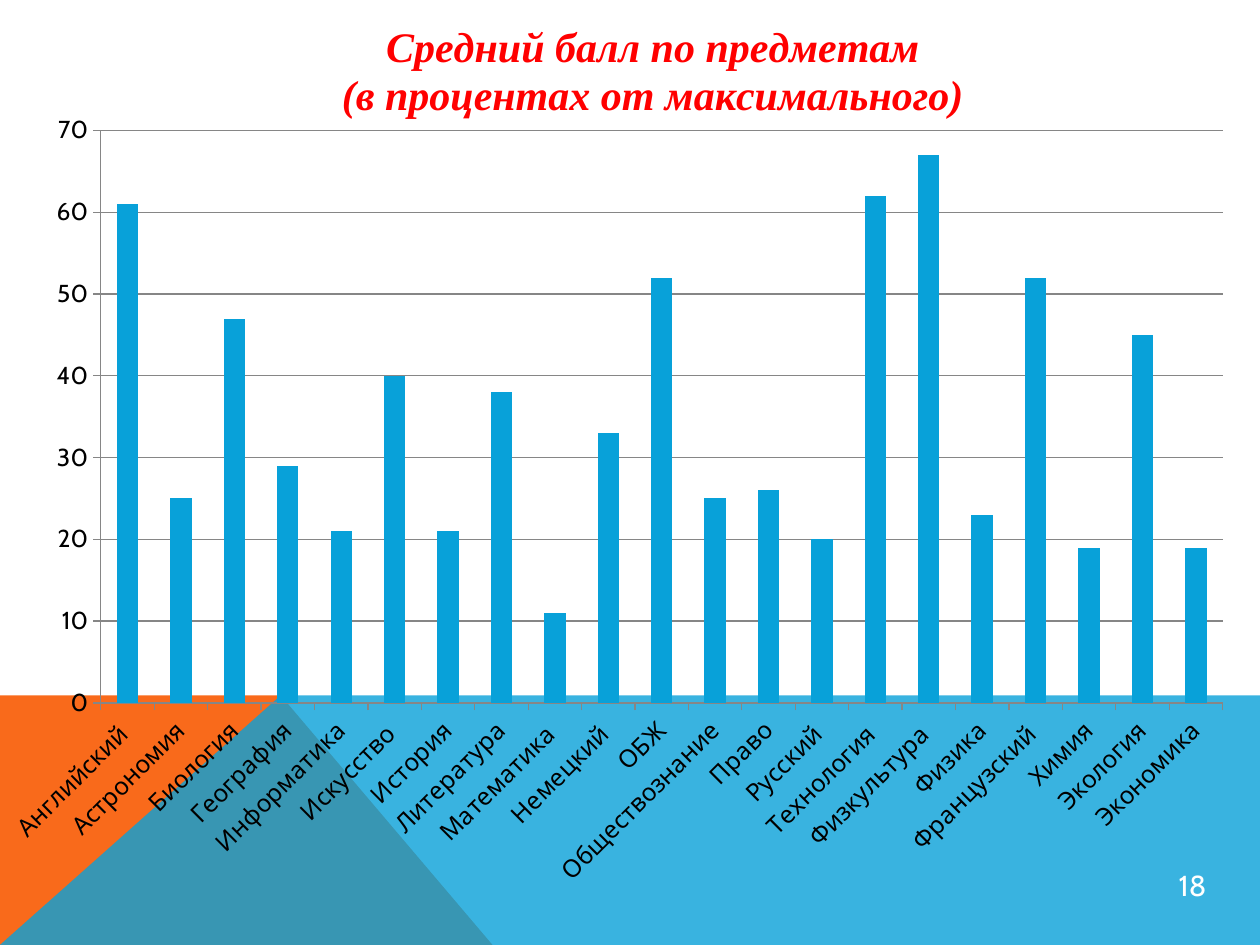
from typing import NamedTuple

from lxml.etree import SubElement
from pptx import Presentation
from pptx.chart.data import CategoryChartData
from pptx.dml.color import RGBColor
from pptx.enum.chart import XL_CHART_TYPE as ChartType, XL_TICK_MARK as TickMark
from pptx.enum.shapes import MSO_SHAPE as ShapeKind
from pptx.enum.text import MSO_ANCHOR as Anchor, PP_ALIGN as Align
from pptx.oxml.ns import qn
from pptx.util import Cm, Pt

ORANGE = RGBColor(0xF9, 0x6A, 0x1B)
BLUE = RGBColor(0x08, 0xA1, 0xD9)
RED = RGBColor(0xFF, 0x00, 0x00)
GRAY = RGBColor(0x86, 0x86, 0x86)
BLACK = RGBColor(0x00, 0x00, 0x00)
WHITE = RGBColor(0xFF, 0xFF, 0xFF)
BODY_FONT = "Cabin"
TITLE_FONT = "Times New Roman"
WIDTH, HEIGHT = 25.4, 19.05
BAND_TOP, PEAK = 14.02, 5.66


class Band(NamedTuple):
    points: list[tuple[float, float]]
    color: RGBColor
    opacity: int


class Score(NamedTuple):
    subject: str
    percent: int


BANDS = [
    Band([(0, HEIGHT), (0, BAND_TOP), (PEAK, BAND_TOP), (9.93, HEIGHT)], ORANGE, 100),
    Band([(0, HEIGHT), (PEAK, BAND_TOP), (WIDTH, BAND_TOP), (WIDTH, HEIGHT)], BLUE, 80),
]

SCORES = [
    Score("Английский ", 61),
    Score("Астрономия", 25),
    Score("Биология", 47),
    Score("География", 29),
    Score("Информатика", 21),
    Score("Искусство ", 40),
    Score("История", 21),
    Score("Литература", 38),
    Score("Математика ", 11),
    Score("Немецкий ", 33),
    Score("ОБЖ", 52),
    Score("Обществознание", 25),
    Score("Право", 26),
    Score("Русский ", 20),
    Score("Технология ", 62),
    Score("Физкультура ", 67),
    Score("Физика", 23),
    Score("Французский ", 52),
    Score("Химия", 19),
    Score("Экология", 45),
    Score("Экономика", 19),
]


def add_band(slide, band: Band) -> None:
    start, *others = [(Cm(x), Cm(y)) for x, y in band.points]
    builder = slide.shapes.build_freeform(*start)
    builder.add_line_segments(others, close=True)
    shape = builder.convert_to_shape()
    shape.shadow.inherit = False
    shape.line.fill.background()
    shape.fill.solid()
    shape.fill.fore_color.rgb = band.color
    if band.opacity < 100:
        color = shape.fill._xPr.find(f".//{qn('a:srgbClr')}")
        SubElement(color, qn("a:alpha"), val=str(band.opacity * 1000))


def add_page_number(slide, number: int) -> None:
    shape = slide.shapes.add_shape(ShapeKind.OVAL, Cm(23.34), Cm(17.15), Cm(1.4), Cm(1.4))
    shape.shadow.inherit = False
    shape.fill.background()
    shape.line.fill.background()
    frame = shape.text_frame
    frame.margin_left = frame.margin_right = Cm(0.03)
    frame.margin_top = frame.margin_bottom = Cm(0.03)
    frame.vertical_anchor = Anchor.MIDDLE
    frame.word_wrap = False
    frame.text = str(number)
    paragraph = frame.paragraphs[0]
    paragraph.alignment = Align.CENTER
    font = paragraph.runs[0].font
    font.name, font.size = BODY_FONT, Pt(16.5)
    font.color.rgb = WHITE


def set_layout(element, position: int, percents: dict[str, float], target: str = "") -> None:
    for old in element.findall(qn("c:layout")):
        element.remove(old)
    layout = SubElement(element, qn("c:layout"))
    manual = SubElement(layout, qn("c:manualLayout"))
    if target:
        SubElement(manual, qn("c:layoutTarget"), val=target)
    for mode in ("xMode", "yMode"):
        SubElement(manual, qn(f"c:{mode}"), val="edge")
    for name, percent in percents.items():
        SubElement(manual, qn(f"c:{name}"), val=str(percent / 100))
    element.insert(position, layout)


def format_title(chart, lines: list[str]) -> None:
    frame = chart.chart_title.text_frame
    frame.text = "\n".join(lines)
    for paragraph in frame.paragraphs:
        paragraph.alignment = Align.CENTER
        font = paragraph.runs[0].font
        font.name, font.size = TITLE_FONT, Pt(24)
        font.bold = font.italic = True
        font.color.rgb = RED
    title = chart.element.find(f".//{qn('c:title')}")
    set_layout(title, 1, {"x": 27.15, "y": 1.95})
    overlay = title.find(qn("c:overlay"))
    if overlay is not None:
        overlay.set("val", "1")


def format_axis(axis) -> None:
    axis.major_tick_mark = TickMark.OUTSIDE
    axis.minor_tick_mark = TickMark.NONE
    axis.format.line.color.rgb = GRAY
    axis.format.line.width = Pt(0.75)
    font = axis.tick_labels.font
    font.name, font.size = BODY_FONT, Pt(14)
    font.color.rgb = BLACK


def add_score_chart(slide, scores: list[Score]) -> None:
    data = CategoryChartData()
    data.categories = [score.subject for score in scores]
    data.add_series("Series 1", [score.percent for score in scores])
    chart = slide.shapes.add_chart(
        ChartType.COLUMN_CLUSTERED, 0, 0, Cm(25.1), Cm(HEIGHT), data
    ).chart
    chart.has_legend = False
    chart.font.name, chart.font.size = BODY_FONT, Pt(10)
    chart.font.color.rgb = BLACK
    format_title(chart, ["Средний балл по предметам", "(в процентах от максимального)"])

    plot = chart.plots[0]
    plot.gap_width = 150
    plot.vary_by_categories = False
    fill = plot.series[0].format.fill
    fill.solid()
    fill.fore_color.rgb = BLUE

    format_axis(chart.category_axis)
    labels = chart.category_axis._element.find(f"{qn('c:txPr')}/{qn('a:bodyPr')}")
    labels.set("rot", "-2700000")
    labels.set("vert", "horz")

    value_axis = chart.value_axis
    format_axis(value_axis)
    value_axis.minimum_scale, value_axis.maximum_scale = 0, 70
    value_axis.major_unit = 10
    value_axis.has_major_gridlines = True
    value_axis.major_gridlines.format.line.color.rgb = GRAY
    value_axis.major_gridlines.format.line.width = Pt(0.75)

    plot_area = chart.element.find(f".//{qn('c:plotArea')}")
    set_layout(plot_area, 0, {"x": 8.1, "y": 13.8, "w": 90.1, "h": 60.6}, "inner")


def main() -> None:
    presentation = Presentation()
    presentation.slide_width, presentation.slide_height = Cm(WIDTH), Cm(HEIGHT)
    slide = presentation.slides.add_slide(presentation.slide_layouts[6])
    for band in BANDS:
        add_band(slide, band)
    add_page_number(slide, 18)
    add_score_chart(slide, SCORES)
    presentation.save("out.pptx")


if __name__ == "__main__":
    main()
